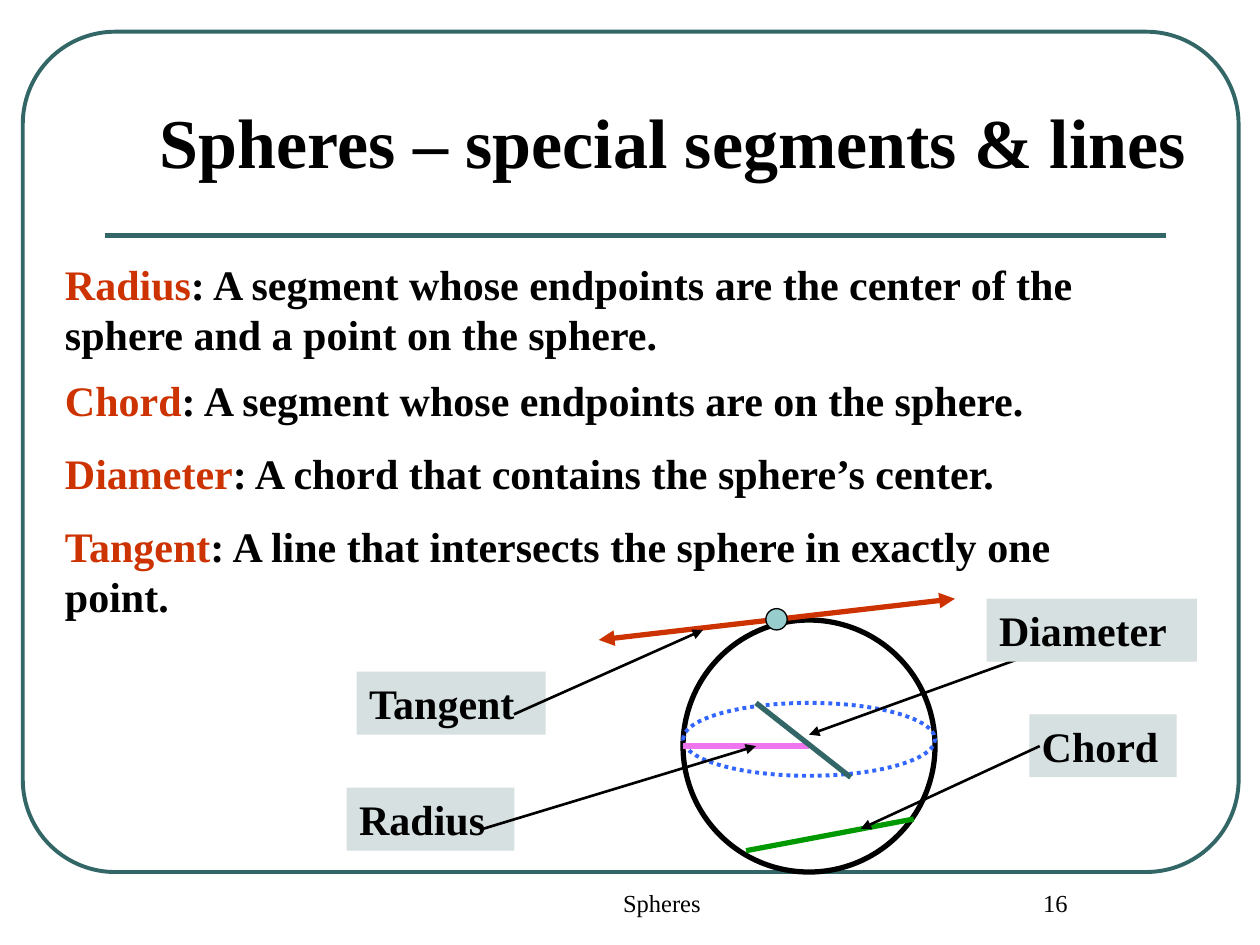
from lxml.etree import SubElement
from pptx import Presentation
from pptx.dml.color import RGBColor
from pptx.enum.dml import MSO_LINE
from pptx.enum.shapes import MSO_CONNECTOR, MSO_SHAPE
from pptx.enum.text import MSO_ANCHOR, PP_ALIGN
from pptx.oxml.ns import qn
from pptx.util import Cm, Pt

BLACK, TEAL, RED = "000000", "336666", "CC3300"
BOLD = {"size": Pt(24), "bold": True}

# left, top, width and height in centimetres
DEFINITIONS = [
    ("Radius", ": A segment whose endpoints are the center of the sphere and a point on the sphere.",
     (1.06, 5.08, 22.66, 2.29)),
    ("Chord", ": A segment whose endpoints are on the sphere.", (1.06, 7.42, 23.5, 1.27)),
    ("Diameter", ": A chord that contains the sphere’s center.", (1.06, 8.89, 20.52, 1.27)),
    ("Tangent", ": A line that intersects the sphere in exactly one point.", (1.06, 10.36, 22.23, 1.27)),
]
LABELS = [
    ("Radius", (6.99, 15.88, 3.38, 1.27)),
    ("Chord", (20.75, 14.4, 2.97, 1.27)),
    ("Diameter", (19.89, 12.07, 4.24, 1.27)),
    ("Tangent", (7.19, 13.54, 3.81, 1.27)),
]
# start and end points in centimetres
SEGMENTS = [
    ((15.04, 17.15), (18.42, 16.51), "009900"),
    ((13.77, 15.04), (16.31, 15.04), "EF75EF"),
    ((15.24, 14.17), (17.15, 15.67), TEAL),
]
DIAMETER_POINTER = ((20.96, 13.13), (16.31, 14.81))
POINTERS = [
    ((9.73, 16.71), (15.24, 15.04)),
    ((10.36, 14.4), (14.17, 12.7)),
    ((20.96, 15.04), (17.35, 16.71)),
]


def color(value):
    return RGBColor.from_string(value)


def add_run(paragraph, text, text_color, font_format):
    run = paragraph.add_run()
    run.text = text
    run.font.name = "Times New Roman"
    run.font.color.rgb = color(text_color)
    for name, value in font_format.items():
        setattr(run.font, name, value)


def add_text(slide, box, runs, font_format, alignment=PP_ALIGN.LEFT):
    """Add a wrapping text box; runs are (text, color) pairs."""
    shape = slide.shapes.add_textbox(*map(Cm, box))
    shape.text_frame.word_wrap = True
    paragraph = shape.text_frame.paragraphs[0]
    paragraph.alignment = alignment
    for text, text_color in runs:
        add_run(paragraph, text, text_color, font_format)
    return shape


def add_label(slide, text, box):
    label = add_text(slide, box, [(text, BLACK)], BOLD)
    label.fill.solid()
    label.fill.fore_color.rgb = color("D6E0E0")


def add_outline(slide, kind, box, line_color, width, fill=None, dash=None):
    shape = slide.shapes.add_shape(kind, *map(Cm, box))
    shape.shadow.inherit = False
    if fill:
        shape.fill.solid()
        shape.fill.fore_color.rgb = color(fill)
    else:
        shape.fill.background()
    shape.line.color.rgb = color(line_color)
    shape.line.width = Pt(width)
    if dash:
        shape.line.dash_style = dash
    return shape


def add_line(slide, start, end, line_color, width, arrowheads=()):
    """Draw a line; arrowheads may hold headEnd (start) and tailEnd (end)."""
    line = slide.shapes.add_connector(MSO_CONNECTOR.STRAIGHT, *map(Cm, start + end))
    line.line.color.rgb = color(line_color)
    line.line.width = Pt(width)
    properties = line._element.spPr
    for arrowhead in arrowheads:
        SubElement(properties.find(qn("a:ln")), qn(f"a:{arrowhead}"), type="triangle")
    SubElement(properties, qn("a:effectLst"))


def add_pointer(slide, start, end):
    add_line(slide, start, end, BLACK, 1.5, ["tailEnd"])


def set_title(slide, text):
    title = slide.shapes.title
    box = {"left": 2.97, "top": 1.7, "width": 21.59, "height": 2.11}
    for name, value in box.items():
        setattr(title, name, Cm(value))
    title.text_frame.vertical_anchor = MSO_ANCHOR.BOTTOM
    paragraph = title.text_frame.paragraphs[0]
    paragraph.alignment = PP_ALIGN.LEFT
    add_run(paragraph, text, BLACK, {"size": Pt(40), "bold": True})


def add_frame(slide):
    frame = add_outline(slide, MSO_SHAPE.ROUNDED_RECTANGLE, (0.46, 0.64, 24.51, 16.94), TEAL, 2.25)
    frame.adjustments[0] = 0.11
    add_line(slide, (2.11, 4.75), (23.5, 4.75), TEAL, 3)


def add_footer(slide):
    for text, left, width in [("Spheres", 9.32, 8.05), ("16", 19.05, 4.45)]:
        add_text(slide, (left, 17.78, width, 1.27), [(text, BLACK)], {"size": Pt(14)}, PP_ALIGN.CENTER)


def add_sphere(slide):
    add_outline(slide, MSO_SHAPE.OVAL, (13.77, 12.5, 5.08, 5.08), BLACK, 3)
    add_outline(slide, MSO_SHAPE.OVAL, (13.77, 14.17, 5.08, 1.47), "3366FF", 2.25, dash=MSO_LINE.ROUND_DOT)
    for start, end, line_color in SEGMENTS:
        add_line(slide, start, end, line_color, 3)
    add_line(slide, (12.07, 12.9), (19.25, 12.07), RED, 3, ["headEnd", "tailEnd"])
    add_outline(slide, MSO_SHAPE.OVAL, (15.44, 12.27, 0.43, 0.43), BLACK, 0.75, fill="97CDCC")


def main():
    presentation = Presentation()
    presentation.slide_width, presentation.slide_height = Cm(25.4), Cm(19.05)
    slide = presentation.slides.add_slide(presentation.slide_layouts[5])

    add_frame(slide)
    add_footer(slide)
    set_title(slide, "Spheres – special segments & lines")
    for term, meaning, box in DEFINITIONS:
        add_text(slide, box, [(term, RED), (meaning, BLACK)], BOLD)

    add_sphere(slide)
    add_pointer(slide, *DIAMETER_POINTER)
    for text, box in LABELS:
        add_label(slide, text, box)
    for start, end in POINTERS:
        add_pointer(slide, start, end)

    presentation.save("out.pptx")


if __name__ == "__main__":
    main()
